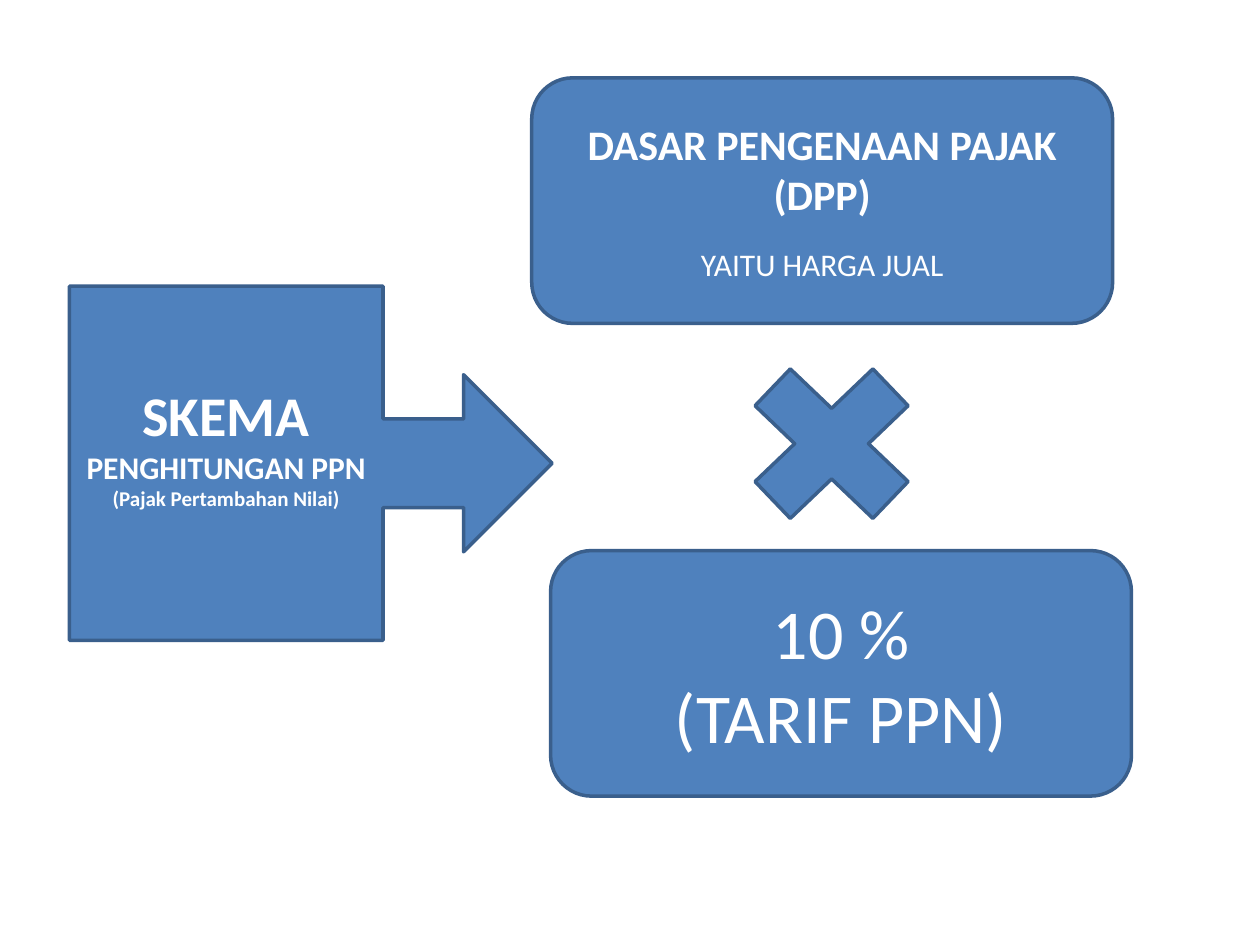
"""Build a slide showing how value added tax is calculated."""
from pptx import Presentation
from pptx.dml.color import RGBColor
from pptx.enum.shapes import MSO_SHAPE
from pptx.enum.text import MSO_ANCHOR, PP_ALIGN
from pptx.util import Cm, Pt

CALLOUT = MSO_SHAPE.RIGHT_ARROW_CALLOUT
ROUNDED = MSO_SHAPE.ROUNDED_RECTANGLE
TIMES = MSO_SHAPE.MATH_MULTIPLY
MIDDLE = MSO_ANCHOR.MIDDLE
CENTER = PP_ALIGN.CENTER

COLORS = {"fill": "4F81BD", "outline": "3A5F8C", "text": "FFFFFF"}
FACTOR_SIZE = (11.71, 4.95)


def color(key):
    """Return the palette colour for a key."""
    return RGBColor.from_string(COLORS[key])


def apply_format(target, values):
    """Set each attribute named in values on the target."""
    for attribute, value in values.items():
        setattr(target, attribute, value)


def add_block(slide, kind, left, top, width, height):
    """Add a filled, outlined preset shape measured in centimetres."""
    block = slide.shapes.add_shape(kind, Cm(left), Cm(top), Cm(width), Cm(height))
    block.shadow.inherit = False
    block.fill.solid()
    block.fill.fore_color.rgb = color("fill")
    block.line.color.rgb = color("outline")
    block.line.width = Pt(2)
    return block


def write_lines(block, lines, bottom=0.13):
    """Write centred lines given as text, size, bold and space before."""
    frame = block.text_frame
    apply_format(frame, {"word_wrap": True, "vertical_anchor": MIDDLE,
                         "margin_bottom": Cm(bottom)})
    for index, (text, size, bold, gap) in enumerate(lines):
        paragraph = frame.add_paragraph() if index else frame.paragraphs[0]
        apply_format(paragraph, {"alignment": CENTER, "space_before": Pt(gap)})
        run = paragraph.add_run()
        run.text = text
        apply_format(run.font, {"name": "Calibri", "size": Pt(size), "bold": bold})
        run.font.color.rgb = color("text")


def main():
    """Build and save the slide."""
    deck = Presentation()
    apply_format(deck, {"slide_width": Cm(25.4), "slide_height": Cm(19.05)})
    slide = deck.slides.add_slide(deck.slide_layouts[6])

    scheme = add_block(slide, CALLOUT, 1.4, 5.77, 9.73, 7.14)
    write_lines(scheme, [
        ("SKEMA", 32, True, 0),
        ("PENGHITUNGAN PPN", 18, True, 0),
        ("(Pajak Pertambahan Nilai)", 12, True, 0),
    ], bottom=0.82)

    tax_base = add_block(slide, ROUNDED, 10.72, 1.57, *FACTOR_SIZE)
    write_lines(tax_base, [
        ("DASAR PENGENAAN PAJAK", 24, True, 0),
        ("(DPP)", 24, True, 0),
        ("YAITU HARGA JUAL", 18, False, 14.6),
    ])

    tax_rate = add_block(slide, ROUNDED, 11.1, 11.1, *FACTOR_SIZE)
    write_lines(tax_rate, [
        ("10 %", 40, False, 0),
        ("(TARIF PPN)", 40, False, 0),
    ])

    add_block(slide, TIMES, 14.48, 6.76, 4.57, 4.37)
    deck.save("out.pptx")


if __name__ == "__main__":
    main()
